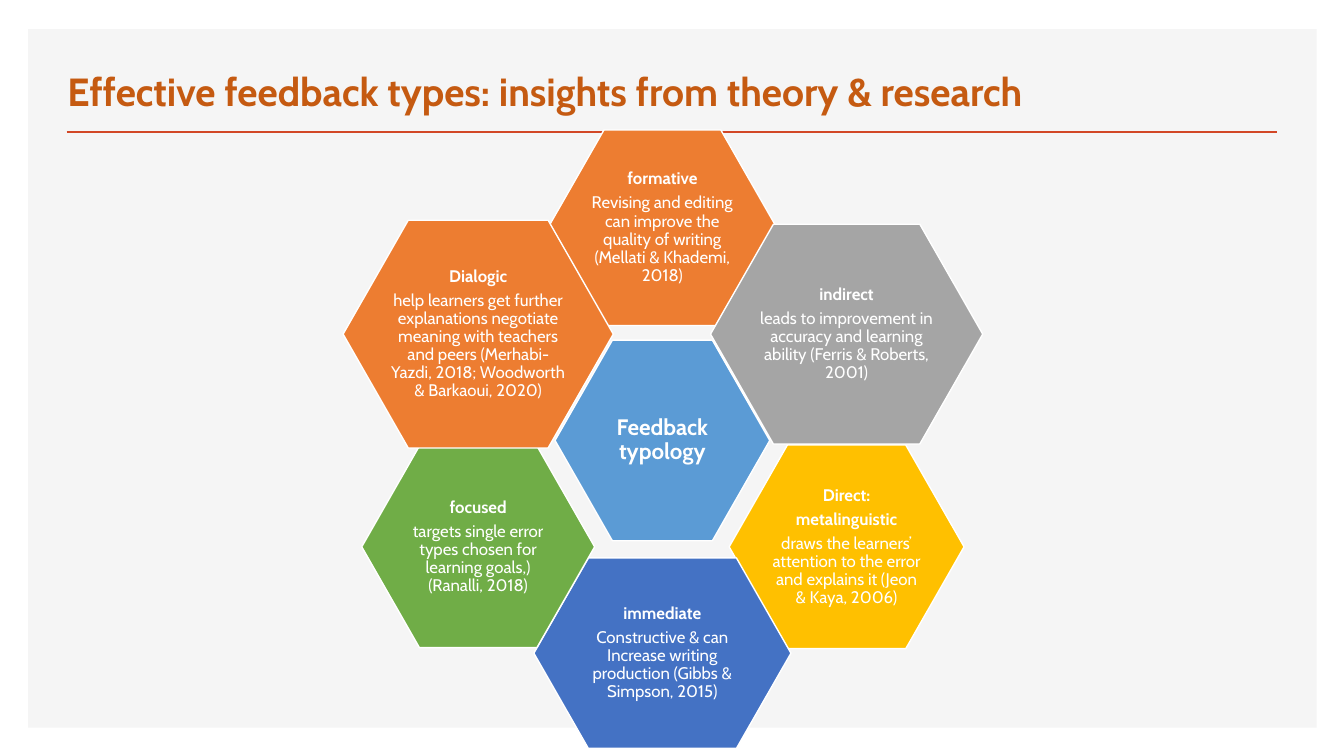
import math
from dataclasses import dataclass

import pptx
import pptx.dml.color
import pptx.enum.shapes
import pptx.enum.text
import pptx.oxml
import pptx.util
from pptx.util import Inches


@dataclass(frozen=True)
class Theme:
    font: str = "Cabin"
    panel: str = "F5F5F5"
    rule: str = "D24726"
    title: str = "C55A11"
    light: str = "FFFFFF"
    blue: str = "5B9BD5"
    orange: str = "ED7D31"
    grey: str = "A5A5A5"
    gold: str = "FFC000"
    indigo: str = "4472C4"
    green: str = "70AD47"
    title_size: int = 28
    hub_size: int = 16
    body_size: int = 12


THEME = Theme()

HUB = (2.13, 1.99, THEME.blue, ["Feedback typology"], None)
FEEDBACK_TYPES = [
    (2.27, 1.94, THEME.orange, ["formative"],
     "Revising and editing can improve the quality of writing (Mellati & Khademi, 2018)"),
    (2.7, 2.18, THEME.grey, ["indirect"],
     "leads to improvement in accuracy and learning ability (Ferris & Roberts, 2001)"),
    (2.33, 2.02, THEME.gold, ["Direct:", "metalinguistic"],
     "draws the learners’ attention to the error and explains it (Jeon & Kaya, 2006)"),
    (2.55, 1.89, THEME.indigo, ["immediate"],
     "Constructive & can Increase writing production (Gibbs & Simpson, 2015)"),
    (2.31, 2, THEME.green, ["focused"],
     "targets single error types chosen for learning goals,) (Ranalli, 2018)"),
    (2.68, 2.26, THEME.orange, ["Dialogic"],
     "help learners get further explanations negotiate meaning with teachers "
     "and peers (Merhabi-Yazdi, 2018; Woodworth & Barkaoui, 2020)"),
]


def rgb(value):
    return pptx.dml.color.RGBColor.from_string(value)


def add_run(paragraph, text, size, color, bold):
    run = paragraph.add_run()
    run.text = text
    run.font.name = THEME.font
    run.font.size = pptx.util.Pt(size)
    run.font.bold = bold
    run.font.color.rgb = rgb(color)


def add_panel(slide, left, top, width, height):
    panel = slide.shapes.add_shape(
        pptx.enum.shapes.MSO_SHAPE.RECTANGLE,
        Inches(left), Inches(top), Inches(width), Inches(height))
    panel.shadow.inherit = False
    panel.fill.solid()
    panel.fill.fore_color.rgb = rgb(THEME.panel)
    panel.line.fill.background()


def add_heading(slide, left, top, width, height, text):
    rule_left, rule_top = left + 0.09, top + height + 0.12
    rule = slide.shapes.add_connector(
        pptx.enum.shapes.MSO_CONNECTOR.STRAIGHT,
        Inches(rule_left), Inches(rule_top),
        Inches(rule_left + 12.01), Inches(rule_top))
    rule.line.color.rgb = rgb(THEME.rule)
    rule.line.width = pptx.util.Pt(2)
    properties = rule._element.spPr
    properties.append(properties.makeelement(pptx.oxml.ns.qn("a:effectLst")))

    heading = slide.shapes.add_textbox(
        Inches(left), Inches(top), Inches(width), Inches(height))
    frame = heading.text_frame
    frame.word_wrap = True
    frame.vertical_anchor = pptx.enum.text.MSO_ANCHOR.BOTTOM
    paragraph = frame.paragraphs[0]
    paragraph.line_spacing = 0.9
    add_run(paragraph, text, THEME.title_size, THEME.title, True)


def add_cell(slide, center_x, center_y, cell, size):
    width, height, color, names, finding = cell
    hexagon = slide.shapes.add_shape(
        pptx.enum.shapes.MSO_SHAPE.HEXAGON,
        Inches(center_x - width / 2), Inches(center_y - height / 2),
        Inches(width), Inches(height))
    hexagon.adjustments[0] = 0.286
    hexagon.shadow.inherit = False
    hexagon.fill.solid()
    hexagon.fill.fore_color.rgb = rgb(color)
    hexagon.line.color.rgb = rgb(THEME.light)
    hexagon.line.width = pptx.util.Pt(1)

    frame = hexagon.text_frame
    frame.word_wrap = True
    frame.vertical_anchor = pptx.enum.text.MSO_ANCHOR.MIDDLE
    frame.margin_left = frame.margin_right = Inches(0.02)
    frame.margin_top = frame.margin_bottom = Inches(0.02)
    lines = [(name, True) for name in names]
    if finding:
        lines.append((finding, False))
    for index, (text, bold) in enumerate(lines):
        paragraph = frame.add_paragraph() if index else frame.paragraphs[0]
        paragraph.alignment = pptx.enum.text.PP_ALIGN.CENTER
        paragraph.line_spacing = 0.9
        paragraph.space_after = pptx.util.Pt(size * 0.35)
        add_run(paragraph, text, size, THEME.light, bold)


def add_honeycomb(slide, left, top, width, height, hub, ring):
    center_x, center_y = left + width / 2, top + height / 2
    radius = height / 2
    add_cell(slide, center_x, center_y, hub, THEME.hub_size)
    for index, cell in enumerate(ring):
        angle = 2 * math.pi * index / len(ring)
        add_cell(slide, center_x + radius * math.sin(angle),
                 center_y - radius * math.cos(angle), cell, THEME.body_size)


def main():
    presentation = pptx.Presentation()
    presentation.slide_width = Inches(13.33)
    presentation.slide_height = Inches(7.5)
    slide = presentation.slides.add_slide(presentation.slide_layouts[6])
    add_panel(slide, 0.28, 0.29, 12.78, 6.93)
    add_heading(slide, 0.57, 0.49, 11.41, 0.7,
                "Effective feedback types: insights from theory & research")
    add_honeycomb(slide, 4.73, 2.26, 3.68, 4.22, HUB, FEEDBACK_TYPES)
    presentation.save("out.pptx")


if __name__ == "__main__":
    main()
